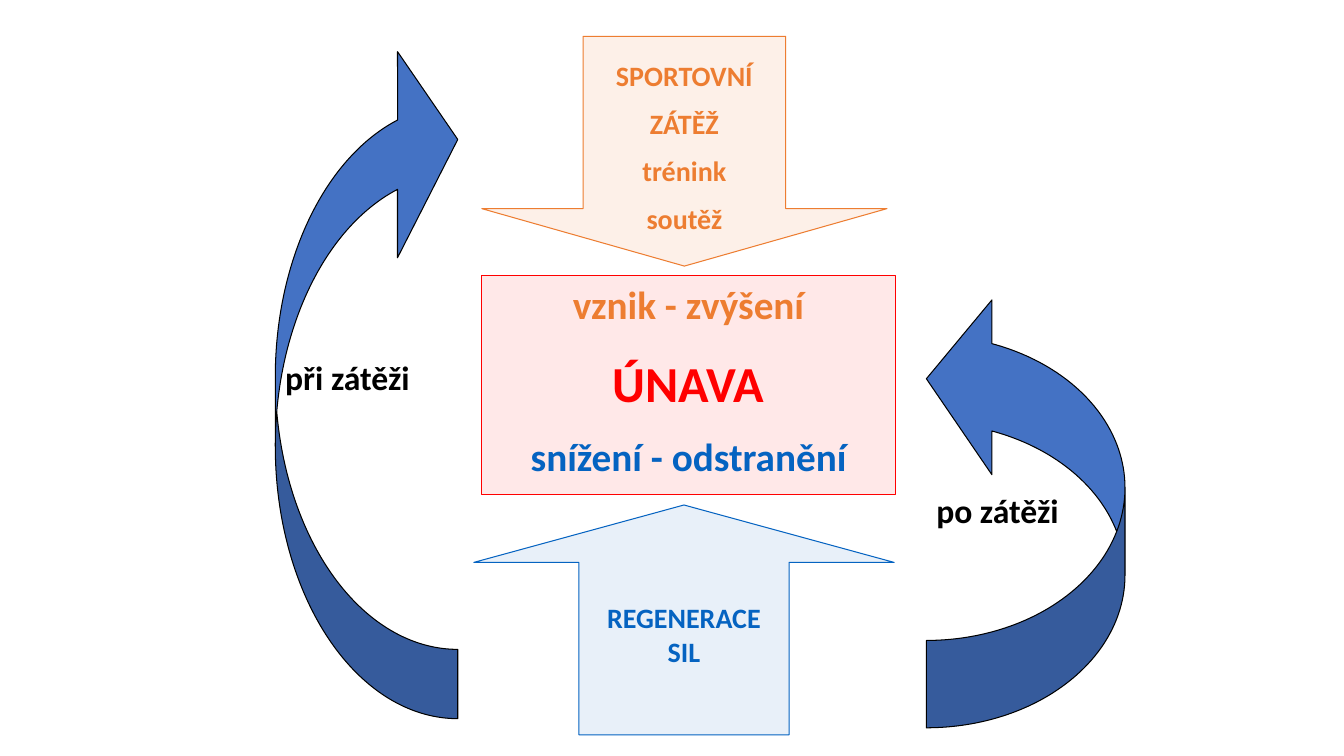
import pptx
import pptx.util
import pptx.dml.color
import pptx.enum.shapes
import pptx.enum.text
import pptx.oxml

SHAPE = pptx.enum.shapes.MSO_SHAPE
ANCHOR = pptx.enum.text.MSO_ANCHOR
COLORS = {"orange": "ED7D31", "red": "FF0000", "blue": "0563C1",
          "arc": "4472C4", "black": "000000"}


class FatigueSlide:
    font = "Calibri"
    line_width = 0.75

    def __init__(self, prs):
        self.prs = prs
        self.s = prs.slides.add_slide(prs.slide_layouts[6])

    def rgb(self, name):
        return pptx.dml.color.RGBColor.from_string(COLORS[name])

    def shape(self, kind, box, fill, line, alpha=None, adj=()):
        x, y, w, h = box
        width, height = self.prs.slide_width, self.prs.slide_height
        sp = self.s.shapes.add_shape(
            kind, int(x / 100 * width), int(y / 100 * height),
            int(w / 100 * width), int(h / 100 * height))
        sp.shadow.inherit = False
        for i, value in enumerate(adj):
            sp.adjustments[i] = value
        sp.fill.solid()
        sp.fill.fore_color.rgb = self.rgb(fill)
        if alpha:
            color = sp.fill._xPr.solidFill[0]
            color.append(pptx.oxml.parse_xml(
                '<a:alpha xmlns:a="http://schemas.openxmlformats.org/drawingml/2006/main"'
                f' val="{alpha * 1000}"/>'))
        sp.line.color.rgb = self.rgb(line)
        sp.line.width = pptx.util.Pt(self.line_width)
        return sp

    def text(self, sp, lines, spaced=False, anchor=ANCHOR.MIDDLE, wrap=False):
        tf = sp.text_frame
        tf.word_wrap = wrap
        tf.vertical_anchor = anchor
        tf.text = "\n".join(words for words, size, color in lines)
        for i, (p, (words, size, color)) in enumerate(zip(tf.paragraphs, lines)):
            p.alignment = pptx.enum.text.PP_ALIGN.CENTER
            if spaced and i:
                p.space_before = pptx.util.Pt(size / 2)
            for r in p.runs:
                r.font.name = self.font
                r.font.size = pptx.util.Pt(size)
                r.font.bold = True
                r.font.color.rgb = self.rgb(color)
        return tf

    def panel(self, box, color, alpha, lines):
        sp = self.shape(SHAPE.RECTANGLE, box, color, color, alpha)
        self.text(sp, lines, spaced=True, anchor=ANCHOR.TOP, wrap=True)

    def block_arrow(self, kind, box, color, alpha, words, spaced=False):
        sp = self.shape(kind, box, color, color, alpha, (0.5, 0.25))
        return self.text(sp, [(word, 20, color) for word in words], spaced)

    def curved_arrow(self, kind, box, adj, label):
        sp = self.shape(kind, box, "arc", "black", adj=adj)
        sp.rotation = 270
        tf = self.text(sp, [(label, 24, "black")])
        tf._txBody.bodyPr.set("vert", "eaVert")


def main():
    prs = pptx.Presentation()
    prs.slide_width = pptx.util.Inches(13.33)
    prs.slide_height = pptx.util.Inches(7.5)
    slide = FatigueSlide(prs)
    slide.panel((35.85, 36.4, 30.75, 29.07), "red", 9, [
        ("vznik - zvýšení", 28, "orange"),
        ("ÚNAVA", 36, "red"),
        ("snížení - odstranění", 28, "blue")])
    tf = slide.block_arrow(SHAPE.DOWN_ARROW, (35.85, 4.8, 30.15, 30.4), "orange", 11,
                           ["SPORTOVNÍ", "ZÁTĚŽ", "trénink", "soutěž"], spaced=True)
    tf.margin_top = pptx.util.Inches(0.25)
    slide.block_arrow(SHAPE.UP_ARROW, (35.25, 66.8, 31.28, 30.4), "blue", 9,
                      ["REGENERACE", "SIL"])
    slide.curved_arrow(SHAPE.CURVED_UP_ARROW, (60.08, 54.27, 32.48, 26.27),
                       (0.44, 0.88, 0.33), "po zátěži")
    slide.curved_arrow(SHAPE.CURVED_DOWN_ARROW, (1.88, 37.87, 50.78, 24.13),
                       (0.38, 1.13, 0.33), "při zátěži")
    prs.save("out.pptx")


if __name__ == "__main__":
    main()
